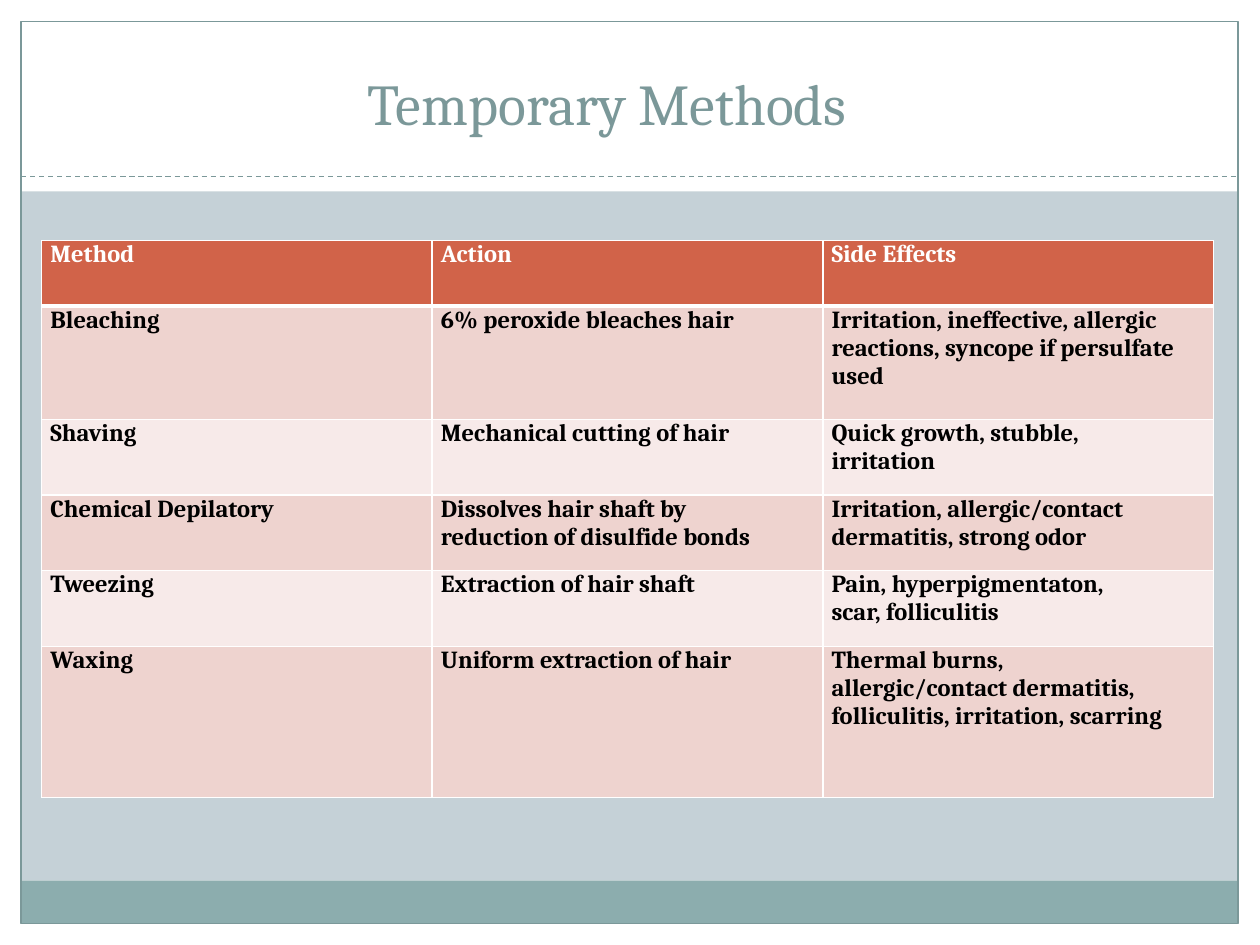
"""Build the slide on temporary methods of hair removal."""
from typing import NamedTuple

from lxml.etree import SubElement
from pptx import Presentation
from pptx.dml.color import RGBColor
from pptx.enum.dml import MSO_LINE
from pptx.enum.shapes import MSO_CONNECTOR, MSO_SHAPE
from pptx.enum.text import MSO_ANCHOR
from pptx.oxml.ns import qn
from pptx.util import Emu, Inches, Pt

WIDE, HIGH = Inches(10), Inches(7.5)
FONT = "Cambria"
HUES = {
    "white": "FFFFFF", "black": "000000", "panel": "C5D1D7", "foot": "8CADAE",
    "frame": "7B9899", "head": "D16349", "dark": "EED3CF", "light": "F7EAE9",
}
PAD = 0.07


class Box(NamedTuple):
    """Place and size as shares of the slide."""
    left: float
    top: float
    width: float
    height: float

    def spot(self) -> list[Emu]:
        """Give the box in slide units."""
        return [Emu(round(part * full))
                for part, full in zip(self, (WIDE, HIGH, WIDE, HIGH))]


class Block(NamedTuple):
    """A plain box with a fill or a line."""
    box: Box
    fill: str = ""
    line: str = ""


class Row(NamedTuple):
    """One table row, with the right inset of each cell."""
    height: float
    words: tuple[str, str, str]
    inset: tuple[float, float, float] = (0, 0, 0)


EDGE, SPAN = 0.167 / 10, 9.66 / 10
BLOCKS = [
    Block(Box(EDGE, 1.52 / 7.5, SPAN, 5.47 / 7.5), fill="panel"),
    Block(Box(EDGE, 6.99 / 7.5, SPAN, 0.34 / 7.5), fill="foot"),
    Block(Box(EDGE, 0.17 / 7.5, SPAN, 7.16 / 7.5), line="frame"),
]
RULE = Box(EDGE, 1.4 / 7.5, SPAN, 0)
TITLE = Box(0.045, 0.19 / 7.5, 0.909, 1.01 / 7.5)
GRID = Box(0.033, 1.91 / 7.5, 0.93, 4.42 / 7.5)
ROWS = [
    Row(0.52, ("Method", "Action", "Side Effects")),
    Row(0.9, ("Bleaching", "6% peroxide bleaches hair",
              "Irritation, ineffective, allergic reactions, syncope if persulfate used"),
        (0, 0, 0.1)),
    Row(0.6, ("Shaving", "Mechanical cutting of hair",
              "Quick growth, stubble, irritation"), (0, 0, 0.3)),
    Row(0.6, ("Chemical Depilatory",
              "Dissolves hair shaft by reduction of disulfide bonds",
              "Irritation, allergic/contact dermatitis, strong odor"), (0, 0.4, 0.3)),
    Row(0.6, ("Tweezing", "Extraction of hair shaft",
              "Pain, hyperpigmentaton, scar, folliculitis"), (0, 0, 0.7)),
    Row(1.2, ("Waxing", "Uniform extraction of hair",
              "Thermal burns, allergic/contact dermatitis, folliculitis, irritation, scarring"),
        (0, 0, 0.3)),
]


def tint(name: str) -> RGBColor:
    """Look up a colour."""
    return RGBColor.from_string(HUES[name])


def write(frame, words: str, size: float, hue: str, bold: bool = False) -> None:
    """Add one run of text to the first paragraph."""
    run = frame.paragraphs[0].add_run()
    run.text = words
    run.font.name, run.font.size, run.font.bold = FONT, Pt(size), bold
    run.font.color.rgb = tint(hue)


def draw_block(shapes, block: Block) -> None:
    """Draw a filled or outlined box."""
    shape = shapes.add_shape(MSO_SHAPE.RECTANGLE, *block.box.spot())
    shape.shadow.inherit = False
    if block.fill:
        shape.fill.solid()
        shape.fill.fore_color.rgb = tint(block.fill)
    else:
        shape.fill.background()
    if block.line:
        shape.line.color.rgb = tint(block.line)
        shape.line.width = Pt(0.75)
    else:
        shape.line.fill.background()


def draw_rule(shapes, box: Box) -> None:
    """Draw the dashed line below the title."""
    left, top, width, height = box.spot()
    rule = shapes.add_connector(
        MSO_CONNECTOR.STRAIGHT, left, top, left + width, top + height)
    rule.line.color.rgb = tint("frame")
    rule.line.width = Pt(0.75)
    rule.line.dash_style = MSO_LINE.DASH
    SubElement(rule._element.spPr, qn("a:effectLst"))


def draw_title(shapes, words: str) -> None:
    """Draw the title."""
    frame = shapes.add_textbox(*TITLE.spot()).text_frame
    frame.word_wrap = True
    frame.vertical_anchor = MSO_ANCHOR.TOP
    frame.margin_left, frame.margin_top = Inches(2.47), Inches(0.35)
    frame.margin_right = frame.margin_bottom = 0
    write(frame, words, 33, "frame")


def add_edges(cell, widths: dict[str, float]) -> None:
    """Line the sides of a cell in white, ahead of its fill."""
    props = cell._tc.get_or_add_tcPr()
    for side, width in widths.items():
        line = SubElement(props, qn(f"a:{side}"), w=str(Pt(width)))
        fill = SubElement(line, qn("a:solidFill"))
        SubElement(fill, qn("a:srgbClr"), val=HUES["white"])


def draw_cell(cell, words: str, inset: float, rank: int) -> None:
    """Fill in one table cell."""
    cell.margin_left, cell.margin_right = Inches(PAD), Inches(inset)
    cell.margin_top = cell.margin_bottom = 0
    add_edges(cell, {"lnL": 1, "lnR": 1, "lnT": 3 if rank == 1 else 1,
                     "lnB": 3 if rank == 0 else 1})
    cell.fill.solid()
    shade = "head" if rank == 0 else "dark" if rank % 2 else "light"
    cell.fill.fore_color.rgb = tint(shade)
    write(cell.text_frame, words, 14, "black" if rank else "white", True)


def draw_table(shapes, rows: list[Row]) -> None:
    """Draw the table of methods."""
    count = len(rows[0].words)
    table = shapes.add_table(len(rows), count, *GRID.spot()).table
    for rank, row in enumerate(rows):
        table.rows[rank].height = Inches(row.height)
        for col, (words, inset) in enumerate(zip(row.words, row.inset)):
            draw_cell(table.cell(rank, col), words, inset, rank)


def main() -> None:
    """Build and save the slide."""
    deck = Presentation()
    deck.slide_width, deck.slide_height = WIDE, HIGH
    shapes = deck.slides.add_slide(deck.slide_layouts[6]).shapes
    for block in BLOCKS:
        draw_block(shapes, block)
    draw_rule(shapes, RULE)
    draw_title(shapes, "Temporary Methods")
    draw_table(shapes, ROWS)
    deck.save("out.pptx")


if __name__ == "__main__":
    main()
